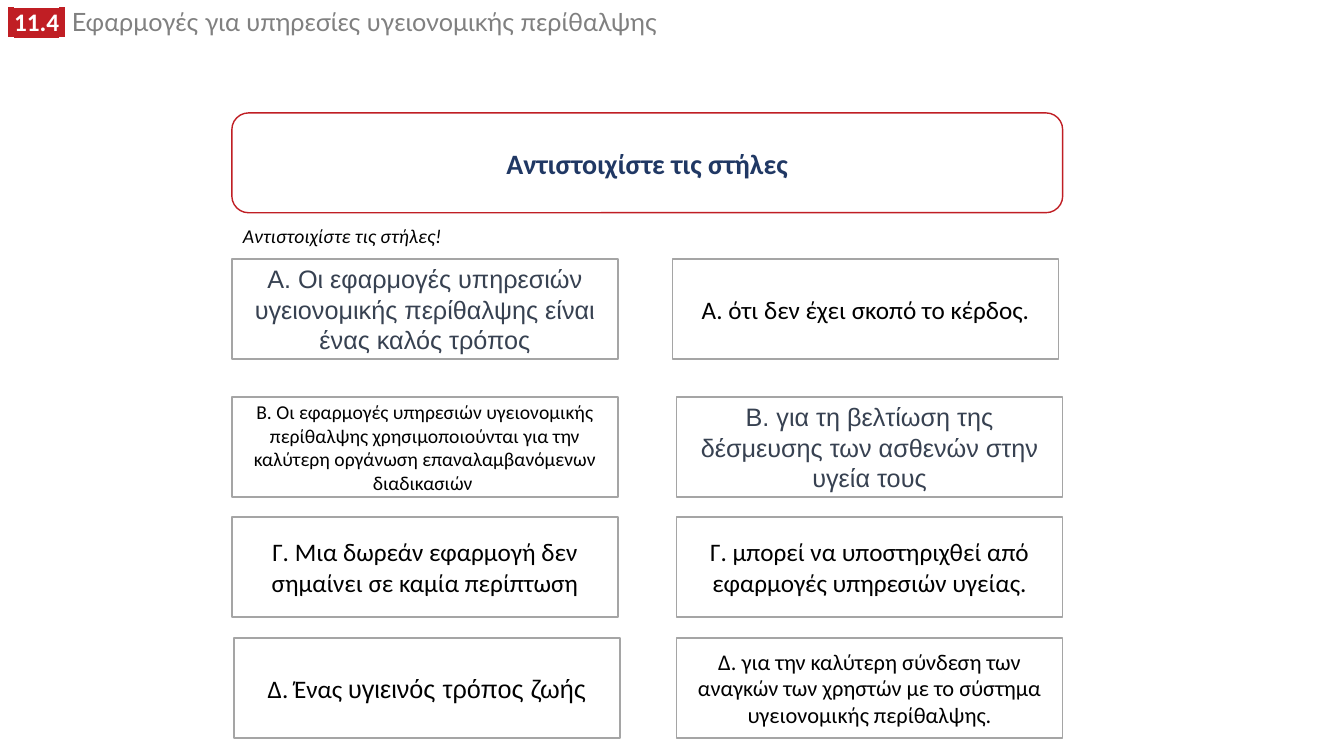
from lxml import etree
from pptx import Presentation
from pptx.dml.color import RGBColor
from pptx.enum.shapes import MSO_SHAPE as Shape
from pptx.enum.text import MSO_ANCHOR as Anchor, MSO_AUTO_SIZE as AutoSize, PP_ALIGN as Align
from pptx.oxml.ns import qn
from pptx.util import Inches, Pt

COLORS = {"white": "FFFFFF", "red": "C01E24", "navy": "203864", "slate": "374151",
          "black": "000000", "header": "808080", "border": "A5A5A5"}


def rgb(name):
    return RGBColor.from_string(COLORS[name])


class MatchingSlide:
    """Style and current slide of a column-matching exercise."""

    def __init__(self, deck):
        self.slide = deck.slides.add_slide(deck.slide_layouts[5])

    def add_run(self, paragraph, text, size, font="Calibri", color="black",
                bold=False, italic=False, highlight=None):
        run = paragraph.add_run()
        run.text = text
        style = run.font
        style.size, style.name = Pt(size), font
        style.bold, style.italic = bold, italic
        style.color.rgb = rgb(color)
        if highlight:
            # The highlight belongs right after the text fill
            mark = etree.Element(qn("a:highlight"))
            etree.SubElement(mark, qn("a:srgbClr")).set("val", COLORS[highlight])
            run.font._element.find(qn("a:solidFill")).addnext(mark)

    def header(self, left, top, width, height, runs):
        title = self.slide.shapes.title
        title.left, title.top = Inches(left), Inches(top)
        title.width, title.height = Inches(width), Inches(height)
        frame = title.text_frame
        frame.vertical_anchor, frame.auto_size = Anchor.TOP, AutoSize.NONE
        frame.word_wrap = True
        line = frame.paragraphs[0]
        line.alignment, line.line_spacing = Align.LEFT, 0.8
        for text, style in runs:
            self.add_run(line, text, 18, **style)

    def box(self, left, top, width, height, runs, kind=Shape.RECTANGLE, border="border"):
        card = self.slide.shapes.add_shape(
            kind, Inches(left), Inches(top), Inches(width), Inches(height))
        card.shadow.inherit = False
        card.fill.solid()
        card.fill.fore_color.rgb = rgb("white")
        card.line.color.rgb = rgb(border)
        card.line.width = Pt(1)
        frame = card.text_frame
        frame.word_wrap, frame.vertical_anchor = True, Anchor.MIDDLE
        line = frame.paragraphs[0]
        line.alignment = Align.CENTER
        for text, style in runs:
            self.add_run(line, text, **style)

    def label(self, left, top, width, height, text, **style):
        note = self.slide.shapes.add_textbox(
            Inches(left), Inches(top), Inches(width), Inches(height))
        note.text_frame.word_wrap = False
        note.text_frame.auto_size = AutoSize.SHAPE_TO_FIT_TEXT
        self.add_run(note.text_frame.paragraphs[0], text, **style)


def main():
    deck = Presentation()
    deck.slide_width, deck.slide_height = Inches(13.33), Inches(7.5)
    exercise = MatchingSlide(deck)

    # Section header with its number tag
    tag = {"color": "white", "bold": True, "highlight": "red"}
    exercise.header(-0.02, 0.07, 9.52, 0.35, [
        (" ", {"font": "Lato", **tag}),
        ("11.4", tag),
        (" ", {"font": "Lato", **tag}),
        (" Εφαρμογές για υπηρεσίες υγειονομικής περίθαλψης",
         {"font": "Lato", "color": "header"}),
    ])

    # Task banner and instruction
    exercise.box(2.3, 1.12, 8.24, 0.99,
                 [("Αντιστοιχίστε τις στήλες", {"size": 20, "color": "navy", "bold": True})],
                 Shape.ROUNDED_RECTANGLE, "red")
    exercise.label(2.31, 2.17, 2.19, 0.34, "Αντιστοιχίστε τις στήλες!", size=14, italic=True)

    # Answer pairs: top, then (left edge, runs) for each column
    plain = {"size": 18}
    accent = {"size": 18, "font": "Arial", "color": "slate"}
    pairs = [
        (2.57,
         (2.3, [("A. Οι εφαρμογές υπηρεσιών υγειονομικής περίθαλψης είναι ένας καλός τρόπος",
                 accent)]),
         (6.67, [("Α. ότι δεν έχει σκοπό το κέρδος.", plain)])),
        (3.94,
         (2.3, [("B. Οι εφαρμογές υπηρεσιών υγειονομικής περίθαλψης χρησιμοποιούνται για "
                 "την καλύτερη οργάνωση επαναλαμβανόμενων διαδικασιών ", {"size": 14})]),
         (6.71, [("Β. για τη βελτίωση της δέσμευσης των ασθενών στην υγεία τους", accent)])),
        (5.13,
         (2.3, [("Γ. Μια δωρεάν εφαρμογή δεν σημαίνει σε καμία περίπτωση", plain)]),
         (6.71, [("Γ. μπορεί να υποστηριχθεί από εφαρμογές υπηρεσιών υγείας.", plain)])),
        (6.33,
         (2.32, [("Δ. Ένας ", plain),
                 ("υγιεινός τρόπος ζωής", {"size": 18, "font": "Arial"})]),
         (6.71, [("Δ. για την καλύτερη σύνδεση των αναγκών των χρηστών με το σύστημα "
                  "υγειονομικής περίθαλψης.", {"size": 16})])),
    ]
    for top, *columns in pairs:
        for left, runs in columns:
            exercise.box(left, top, 3.83, 0.99, runs)

    deck.save("out.pptx")


if __name__ == "__main__":
    main()
